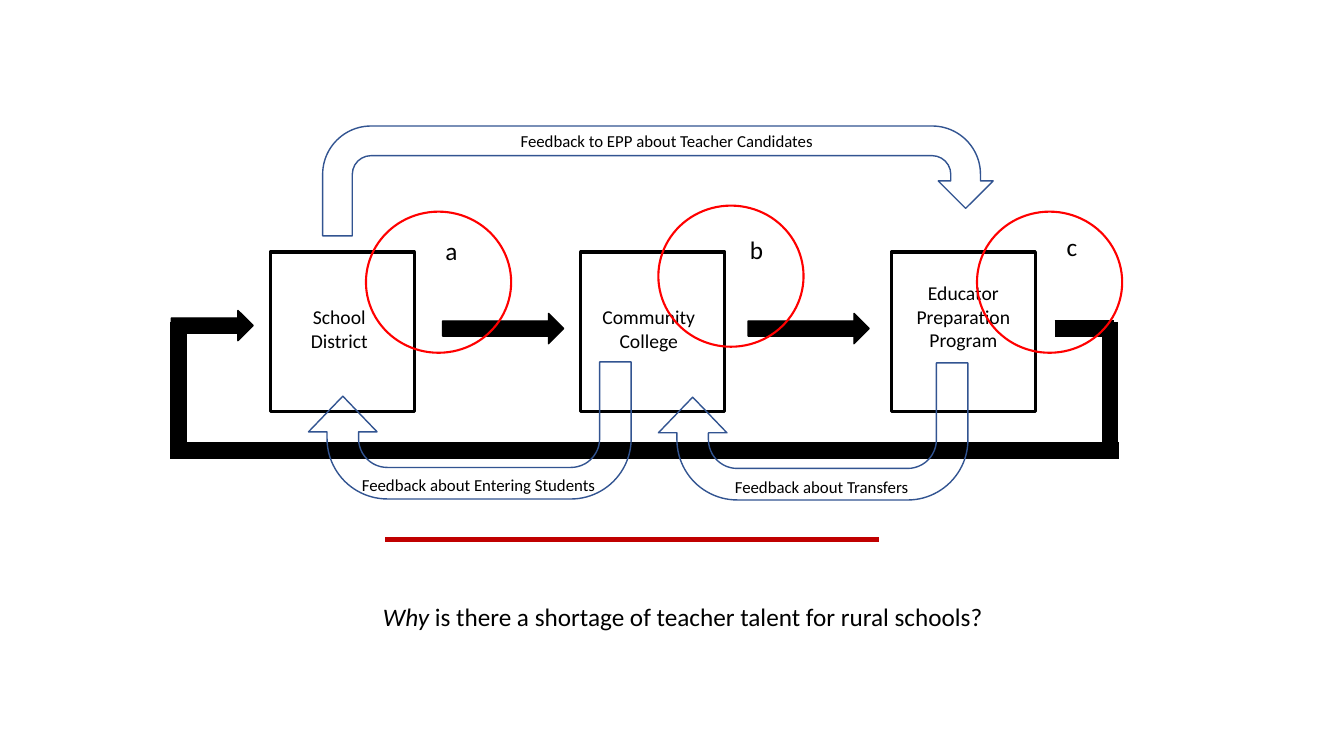
import pptx
import pptx.dml.color
import pptx.enum.shapes
import pptx.enum.text
import pptx.oxml
import pptx.util
from pptx.util import Inches

MSO = pptx.enum.shapes.MSO_SHAPE
ALIGN = pptx.enum.text.PP_ALIGN
COLORS = {"black": "000000", "ring": "FF0000", "feedback": "325491", "rule": "C00000"}


class Diagram:
    """Draws styled elements on the current slide."""

    def __init__(self, slide, font="Calibri"):
        self.slide = slide
        self.font = font

    def color(self, name):
        return pptx.dml.color.RGBColor.from_string(COLORS[name])

    def shape(self, kind, x, y, w, h, line="black", weight=1, fill=None, rotation=0, adj=()):
        sp = self.slide.shapes.add_shape(kind, Inches(x), Inches(y), Inches(w), Inches(h))
        sp.shadow.inherit = False
        sp.rotation = rotation
        if fill:
            sp.fill.solid()
            sp.fill.fore_color.rgb = self.color(fill)
        else:
            sp.fill.background()
        sp.line.color.rgb = self.color(line)
        sp.line.width = pptx.util.Pt(weight)
        for i, value in enumerate(adj):
            sp.adjustments[i] = value
        return sp

    def arrow(self, x, y, w):
        return self.shape(MSO.RIGHT_ARROW, x, y, w, 0.3, fill="black")

    def line(self, x1, y1, x2, y2, color="black", weight=11.75):
        cx = self.slide.shapes.add_connector(
            pptx.enum.shapes.MSO_CONNECTOR.STRAIGHT,
            Inches(x1), Inches(y1), Inches(x2), Inches(y2))
        cx.line.color.rgb = self.color(color)
        cx.line.width = pptx.util.Pt(weight)
        cx._element.spPr.append(pptx.oxml.parse_xml(
            '<a:effectLst xmlns:a="http://schemas.openxmlformats.org/drawingml/2006/main"/>'))
        return cx

    def text(self, text, x, y, w, h, size=12, align=ALIGN.LEFT, color="black", lead=""):
        tb = self.slide.shapes.add_textbox(Inches(x), Inches(y), Inches(w), Inches(h))
        tf = tb.text_frame
        tf.word_wrap = True
        tf.auto_size = pptx.enum.text.MSO_AUTO_SIZE.SHAPE_TO_FIT_TEXT
        p = tf.paragraphs[0]
        p.alignment = align
        for part, italic in ((lead, True), (text, False)):
            if part:
                r = p.add_run()
                r.text = part
                r.font.name = self.font
                r.font.size = pptx.util.Pt(size)
                r.font.italic = italic
                r.font.color.rgb = self.color(color)
        return tb


def main():
    prs = pptx.Presentation()
    prs.slide_width, prs.slide_height = Inches(13.33), Inches(7.5)
    d = Diagram(prs.slides.add_slide(prs.slide_layouts[6]))

    for i in range(3):
        d.shape(MSO.RECTANGLE, 2.68 + 3.08 * i, 2.5, 1.43, 1.58, weight=2.25)
    for x in (4.39, 7.42):
        d.arrow(x, 3.11, 1.2)
    for name, x, y, h in (
        ("School District", 2.74, 2.98, 0.57),
        ("Community College", 5.81, 2.98, 0.57),
        ("Educator Preparation Program", 8.93, 2.74, 0.81),
    ):
        d.text(name, x, y, 1.25, h, size=14, align=ALIGN.CENTER)

    for ends in (
        (10.46, 3.26, 11.05, 3.26),
        (11.01, 4.41, 11.01, 3.19),
        (1.73, 4.47, 11.1, 4.47),
        (1.77, 4.55, 1.77, 3.19),
    ):
        d.line(*ends)
    d.arrow(1.7, 3.08, 0.81)

    for x, y in ((3.63, 2.1), (6.53, 2.04), (9.69, 2.1)):
        d.shape(MSO.OVAL, x, y, 1.44, 1.4, line="ring", weight=1.5)
    for letter, x, y in (("a", 4.32, 2.29), ("b", 7.34, 2.28), ("c", 10.48, 2.25)):
        d.text(letter, x, y, 0.34, 0.4, size=18)

    bend = (0.44, 0.75)
    d.shape(MSO.U_TURN_ARROW, 3.2, 1.25, 6.65, 1.09, line="feedback",
            adj=(0.27, 0.25, 0.25) + bend)
    for x, y, w in ((6.53, 3.6, 3.07), (3.06, 3.59, 3.2)):
        d.shape(MSO.U_TURN_ARROW, x, y, w, 1.36, line="feedback", rotation=180,
                adj=(0.23, 0.25, 0.26) + bend)
    d.text("Feedback to EPP about Teacher Candidates", 5, 1.25, 3.23, 0.3, align=ALIGN.CENTER)
    d.text("Feedback about Transfers", 7.19, 4.68, 2.03, 0.3)
    d.text("Feedback about Entering Students", 3.49, 4.66, 2.65, 0.3)

    d.text("is there a shortage of teacher talent for rural schools?",
           3.7, 5.92, 6.81, 0.4, size=18, lead="Why ")
    d.line(3.82, 5.35, 8.72, 5.35, color="rule", weight=3.75)
    prs.save("out.pptx")


if __name__ == "__main__":
    main()
